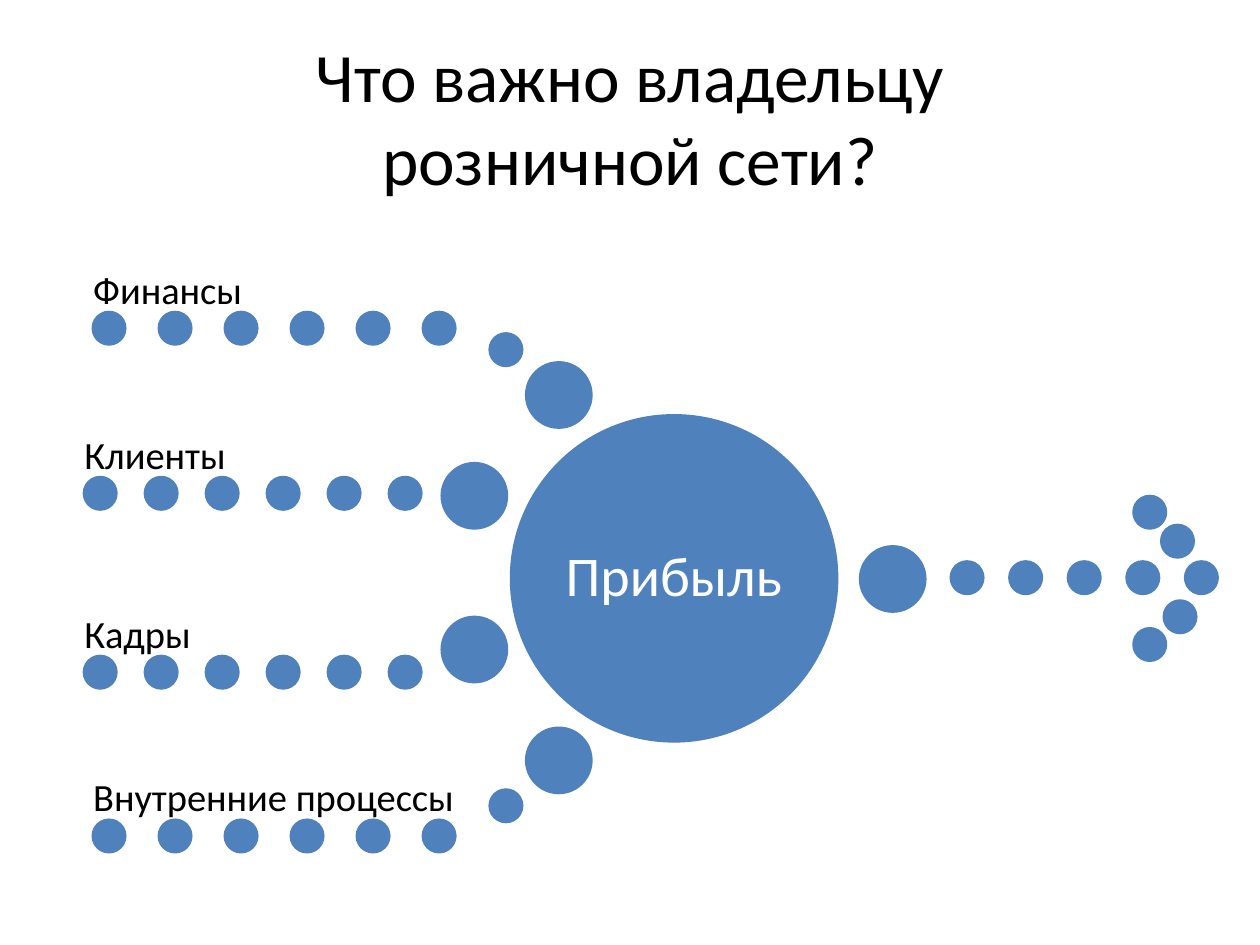
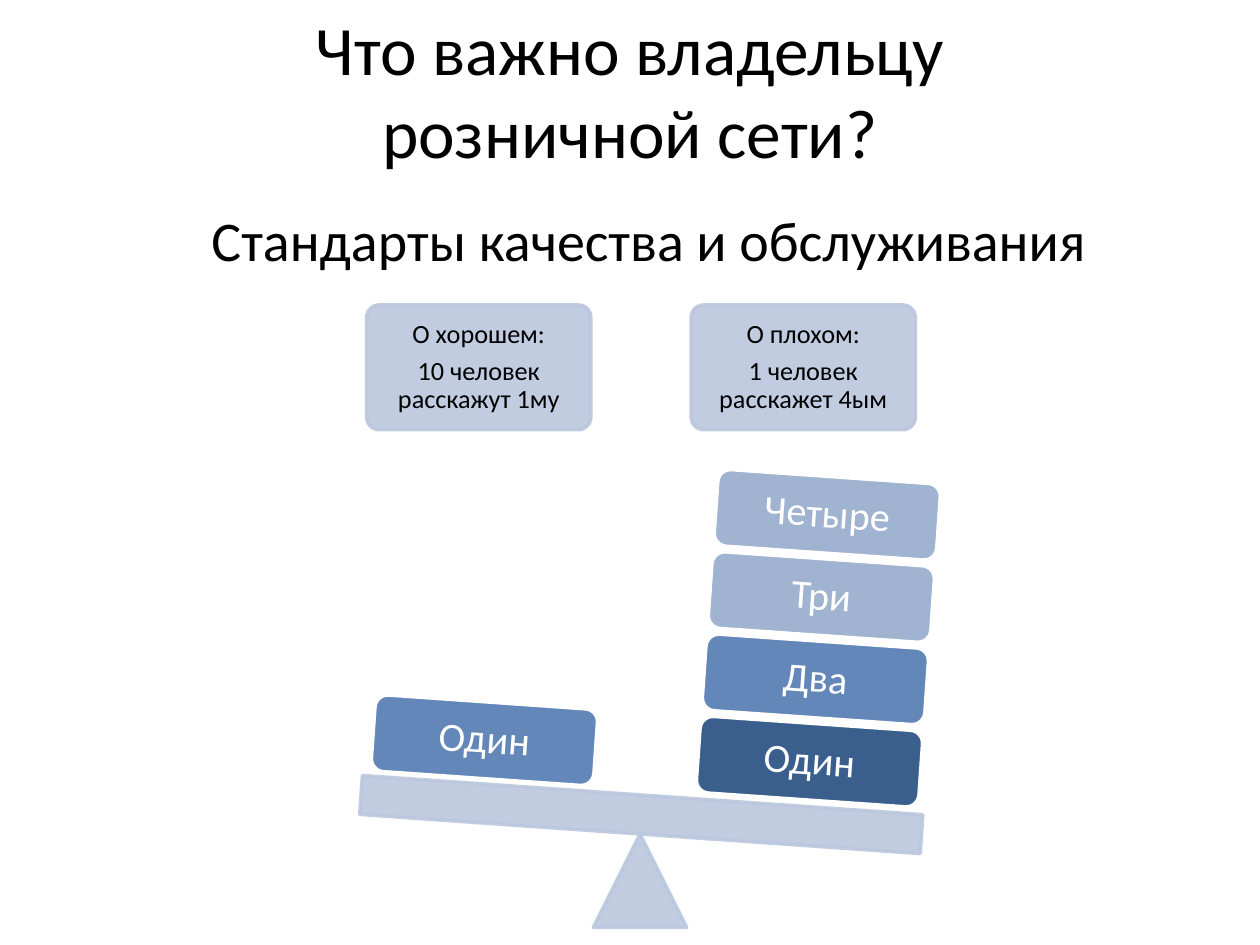
import pptx
import pptx.util
import pptx.dml.color
import pptx.enum.shapes
import pptx.enum.text
import pptx.oxml.ns
import lxml.etree

COLS, ROWS = 100, 75
FONT = "Calibri"
BLACK, WHITE = "000000", "FFFFFF"
BLUE, PALE = "4F81BD", "BBC7DE"
DARK, MID, LIGHT = "3A5F8C", "6387B9", "A0B3D1"
TITLE = "Что важно владельцу\vрозничной сети?"
DOT, BALL = 2.5, 5.1
TILT = 4

KIND = pptx.enum.shapes.MSO_SHAPE
ALIGN = pptx.enum.text.PP_ALIGN
ANCHOR = pptx.enum.text.MSO_ANCHOR

deck = pptx.Presentation()
deck.slide_width = pptx.util.Inches(10)
deck.slide_height = pptx.util.Inches(7.5)


def color(code):
    return pptx.dml.color.RGBColor.from_string(code)


def place(box):
    col, row = deck.slide_width / COLS, deck.slide_height / ROWS
    left, top, wide, high = box
    return [round(n) for n in (left * col, top * row, wide * col, high * row)]


def within(box, left, top, wide, high):
    return box[0] + left, box[1] + top, wide, high


def fade(shape, share):
    tag = pptx.oxml.ns.qn("a:srgbClr")
    for tone in shape.element.spPr.iter(tag):
        alpha = lxml.etree.SubElement(tone, pptx.oxml.ns.qn("a:alpha"))
        alpha.set("val", str(share * 1000))


def write(shape, lines, size, tone=WHITE, align=ALIGN.CENTER,
          anchor=ANCHOR.MIDDLE, inset=None, lead=0.9):
    frame = shape.text_frame
    frame.word_wrap = True
    frame.vertical_anchor = anchor
    if inset is not None:
        pad = pptx.util.Inches(inset)
        frame.margin_left = frame.margin_right = pad
        frame.margin_top = frame.margin_bottom = pad
    for i, line in enumerate(lines):
        para = frame.add_paragraph() if i else frame.paragraphs[0]
        para.text = line
        para.alignment = align
        para.line_spacing = lead
        if i < len(lines) - 1:
            para.space_after = pptx.util.Pt(round(size * 0.35))
        para.font.name = FONT
        para.font.size = pptx.util.Pt(size)
        para.font.color.rgb = color(tone)


def draw(slide, kind, box, fill, edge=None, turn=0):
    shape = slide.shapes.add_shape(kind, *place(box))
    shape.shadow.inherit = False
    shape.fill.solid()
    shape.fill.fore_color.rgb = color(fill)
    shape.line.color.rgb = color(edge or fill)
    shape.line.width = pptx.util.Pt(2)
    shape.rotation = turn
    return shape


def label(slide, box, line, size, **style):
    shape = slide.shapes.add_textbox(*place(box))
    write(shape, [line], size, BLACK, **style)


def title(slide, top):
    label(slide, (5, top, 90, 12.5), TITLE, 39.6, lead=1)


def ball(slide, box, left, top, size):
    spot = within(box, left, top, size, size)
    return draw(slide, KIND.OVAL, spot, BLUE)


def chain(slide, box, top, count):
    step = (box[2] - DOT) / (count - 1)
    for i in range(count):
        ball(slide, box, i * step, top, DOT)


def branch(slide, box, name):
    drop = box[3] - DOT
    chain(slide, box, drop, 6)
    label(slide, within(box, 0, 0, box[2], drop), name, 22,
          align=ALIGN.LEFT, anchor=ANCHOR.BOTTOM, inset=0)


def arrow(slide, box):
    chain(slide, box, 5.2, 5)
    for left, top in ((14.5, 0), (16.7, 2.3), (16.9, 8.3), (14.5, 10.5)):
        ball(slide, box, left, top, DOT)


def hub(slide, box, name):
    core = ball(slide, box, 0, 0, box[2])
    write(core, [name], 32, inset=0.04)
    for left, top in ((1.2, -4.2), (-5.5, 3.8), (-5.5, 16),
                      (1.2, 24.8), (27.7, 10.4)):
        ball(slide, box, left, top, BALL)
    for top in (-6.5, 29.7):
        ball(slide, box, -1.7, top, DOT)


def card(slide, box, lines):
    shape = draw(slide, KIND.ROUNDED_RECTANGLE, box, PALE)
    shape.adjustments[0] = 0.1
    fade(shape, 90)
    write(shape, lines, 15, BLACK, inset=0.06)


def stack(slide, box, tiles):
    for i, (name, fill) in enumerate(tiles):
        spot = within(box, 0.47 * i, -6.53 * i, *box[2:])
        tile = draw(slide, KIND.ROUNDED_RECTANGLE, spot, fill, WHITE, TILT)
        write(tile, [name], 23, inset=0.1)


def scale(slide, box):
    cards = (["О хорошем:", "10 человек расскажут 1му"],
             ["О плохом:", "1 человек расскажет 4ым"])
    for i, lines in enumerate(cards):
        card(slide, within(box, 0.5 + 25.75 * i, 0, 17.8, 9.9), lines)
    base = draw(slide, KIND.ISOSCELES_TRIANGLE,
                within(box, 18.5, 42, 7.4, 7.4), PALE)
    beam = draw(slide, KIND.RECTANGLE,
                within(box, 0, 38.9, 44.6, 3.1), PALE, turn=TILT)
    for part in (base, beam):
        fade(part, 90)
    stack(slide, within(box, 1, 31.5, 17.7, 6.1), [("Один", MID)])
    stack(slide, within(box, 26.8, 33.2, 17.7, 6.1),
          [("Один", DARK), ("Два", MID), ("Три", LIGHT), ("Четыре", LIGHT)])


def profit(slide):
    title(slide, 3)
    arrow(slide, (75.5, 39.4, 21.1, 13))
    hub(slide, (40.6, 33, 25.8, 25.8), "Прибыль")
    outer, inner = (7.4, 28.7), (6.7, 26.7)
    rows = (("Финансы", 18.5, outer), ("Клиенты", 31.6, inner),
            ("Кадры", 45.8, inner), ("Внутренние процессы", 58.8, outer))
    for name, top, (left, wide) in rows:
        branch(slide, (left, top, wide, 8.8), name)


def quality(slide):
    title(slide, 0.8)
    scale(slide, (28.6, 24.2, 45.9, 49.4))
    label(slide, (15.8, 15.8, 73.3, 9.2), "Стандарты качества и обслуживания",
          32, align=ALIGN.LEFT, anchor=ANCHOR.TOP, lead=1)


def main():
    blank = deck.slide_layouts[6]
    for build in (profit, quality):
        build(deck.slides.add_slide(blank))
    deck.save("out.pptx")


if __name__ == "__main__":
    main()
